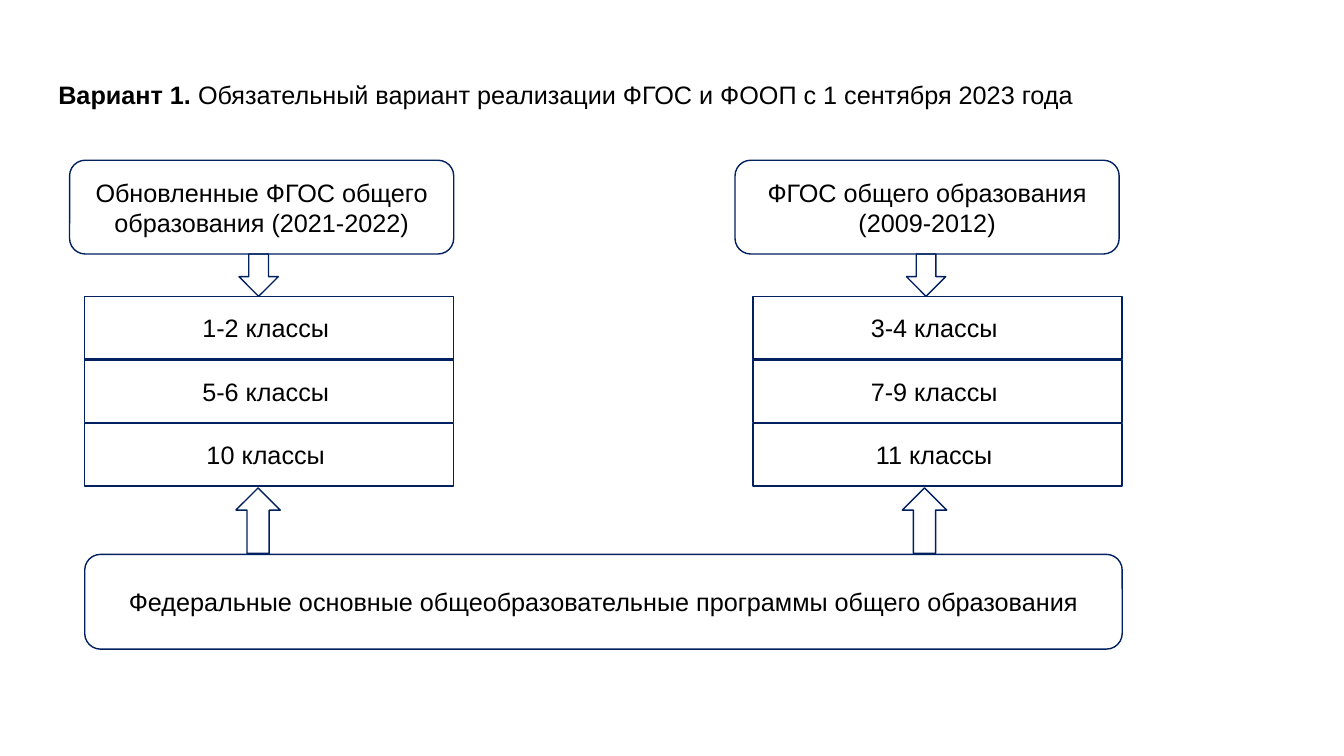
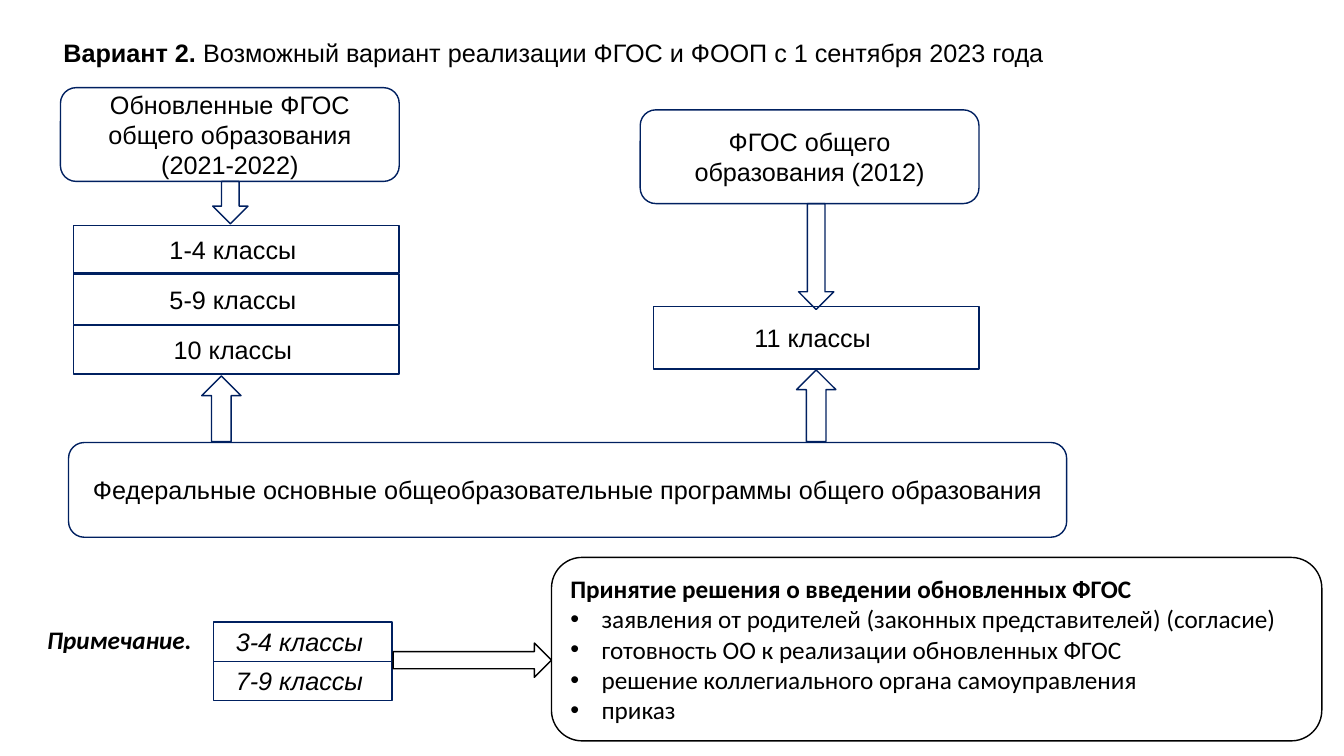
import pptx
import pptx.dml.color
import pptx.enum.shapes
import pptx.enum.text
import pptx.oxml
import pptx.oxml.ns
import pptx.util
from pptx.util import Inches

COLORS = {"text": "000000", "navy": "002060", "black": "000000"}
FONT = "Arial"
NOTE_FONT = "Calibri"
SIZE = 18
ROW_GAP = 0.01
SHAPE = pptx.enum.shapes.MSO_SHAPE
ALIGN = pptx.enum.text.PP_ALIGN
ANCHOR = pptx.enum.text.MSO_ANCHOR
PROGRAMS = "Федеральные основные общеобразовательные программы общего образования"


def color(name):
    return pptx.dml.color.RGBColor.from_string(COLORS[name])


def add_run(p, text, font=FONT, bold=False, italic=False):
    r = p.add_run()
    r.text = text
    r.font.name = font
    r.font.size = pptx.util.Pt(SIZE)
    r.font.bold = bold
    r.font.italic = italic
    r.font.color.rgb = color("text")


def add_outline(slide, kind, x, y, w, h, line="navy"):
    sp = slide.shapes.add_shape(kind, Inches(x), Inches(y), Inches(w), Inches(h))
    sp.shadow.inherit = False
    sp.fill.background()
    sp.line.color.rgb = color(line)
    sp.line.width = pptx.util.Pt(1)
    return sp


def add_box(slide, kind, x, y, w, h, text, italic=False):
    tf = add_outline(slide, kind, x, y, w, h).text_frame
    tf.word_wrap = True
    tf.vertical_anchor = ANCHOR.MIDDLE
    p = tf.paragraphs[0]
    p.alignment = ALIGN.CENTER
    add_run(p, text, italic=italic)


def add_rounded(slide, x, y, w, h, text):
    add_box(slide, SHAPE.ROUNDED_RECTANGLE, x, y, w, h, text)


def add_rows(slide, x, y, w, rows, gap=ROW_GAP, italic=False):
    for text, h in rows:
        add_box(slide, SHAPE.RECTANGLE, x, y, w, h, text, italic)
        y += h + gap


def add_text(slide, x, y, w):
    tb = slide.shapes.add_textbox(Inches(x), Inches(y), Inches(w), Inches(0.4))
    tb.text_frame.word_wrap = True
    return tb.text_frame.paragraphs[0]


def add_title(slide, x, y, label, text):
    p = add_text(slide, x, y, 11.65)
    add_run(p, label, bold=True)
    add_run(p, text)


def set_bullet(p):
    pPr = p._p.get_or_add_pPr()
    pPr.set("marL", str(Inches(0.31)))
    pPr.set("indent", str(-Inches(0.31)))
    ns = pptx.oxml.ns.nsdecls("a")
    pPr.append(pptx.oxml.parse_xml(f'<a:buFont {ns} typeface="Arial"/>'))
    pPr.append(pptx.oxml.parse_xml(f'<a:buChar {ns} char="•"/>'))


def add_decision(slide, x, y, w, h, heading, items):
    sp = add_outline(slide, SHAPE.ROUNDED_RECTANGLE, x, y, w, h, "black")
    tf = sp.text_frame
    tf.word_wrap = True
    tf.vertical_anchor = ANCHOR.MIDDLE
    p = tf.paragraphs[0]
    p.alignment = ALIGN.JUSTIFY
    add_run(p, heading, NOTE_FONT, bold=True)
    for item in items:
        p = tf.add_paragraph()
        p.alignment = ALIGN.JUSTIFY
        set_bullet(p)
        add_run(p, item, NOTE_FONT)


def build_required(slide):
    add_title(slide, 0.48, 0.74, "Вариант 1. ",
              "Обязательный вариант реализации ФГОС и ФООП с 1 сентября 2023 года")
    columns = [
        (0.69, 0.84, 2.37, 2.34, "Обновленные ФГОС общего образования (2021-2022)",
         ["1-2 классы ", "5-6 классы ", "10 классы "]),
        (7.29, 7.47, 8.99, 8.95, "ФГОС общего образования (2009-2012)",
         ["3-4 классы ", "7-9 классы ", "11 классы "]),
    ]
    for head_x, rows_x, down_x, up_x, heading, grades in columns:
        add_rounded(slide, head_x, 1.59, 3.81, 0.93, heading)
        add_outline(slide, SHAPE.DOWN_ARROW, down_x, 2.52, 0.39, 0.42)
        add_rows(slide, rows_x, 2.94, 3.66, [(grade, 0.62) for grade in grades])
        add_outline(slide, SHAPE.UP_ARROW, up_x, 4.84, 0.44, 0.65)
    add_rounded(slide, 0.84, 5.5, 10.29, 0.94, PROGRAMS)


def build_possible(slide):
    add_title(slide, 0.53, 0.32, "Вариант 2. ",
              "Возможный вариант реализации ФГОС и ФООП с 1 сентября 2023 года")
    add_rounded(slide, 0.6, 0.87, 3.36, 0.93,
                "Обновленные ФГОС общего образования (2021-2022)")
    add_rounded(slide, 6.35, 1.09, 3.36, 0.93, "ФГОС общего образования (2012)")
    add_rows(slide, 0.73, 2.24, 3.23,
             [("1-4 классы ", 0.47), ("5-9 классы ", 0.5), ("10 классы ", 0.48)])
    add_rows(slide, 6.48, 3.04, 3.23, [("11 классы ", 0.62)])
    add_rounded(slide, 0.68, 4.39, 9.9, 0.94, PROGRAMS)
    for kind, x, y, w, h in [
        (SHAPE.DOWN_ARROW, 2.11, 1.8, 0.35, 0.42),
        (SHAPE.DOWN_ARROW, 7.92, 2.02, 0.35, 1.05),
        (SHAPE.UP_ARROW, 2, 3.73, 0.39, 0.65),
        (SHAPE.UP_ARROW, 7.9, 3.67, 0.39, 0.71),
    ]:
        add_outline(slide, kind, x, y, w, h)

    add_run(add_text(slide, 0.37, 6.14, 2.45), "Примечание.", NOTE_FONT,
            bold=True, italic=True)
    add_rows(slide, 2.12, 6.17, 1.77,
             [("3-4 классы ", 0.39), ("7-9 классы ", 0.39)], gap=0, italic=True)
    add_outline(slide, SHAPE.RIGHT_ARROW, 3.9, 6.38, 1.57, 0.34, "black")
    add_decision(slide, 5.47, 5.53, 7.64, 1.82,
                 "Принятие решения о введении обновленных ФГОС ", [
                     "заявления от родителей (законных представителей) (согласие)",
                     "готовность ОО к реализации обновленных ФГОС",
                     "решение коллегиального органа самоуправления",
                     "приказ",
                 ])


def main():
    prs = pptx.Presentation()
    prs.slide_width = Inches(13.33)
    prs.slide_height = Inches(7.5)
    for build in (build_required, build_possible):
        build(prs.slides.add_slide(prs.slide_layouts[6]))
    prs.save("out.pptx")


if __name__ == "__main__":
    main()
